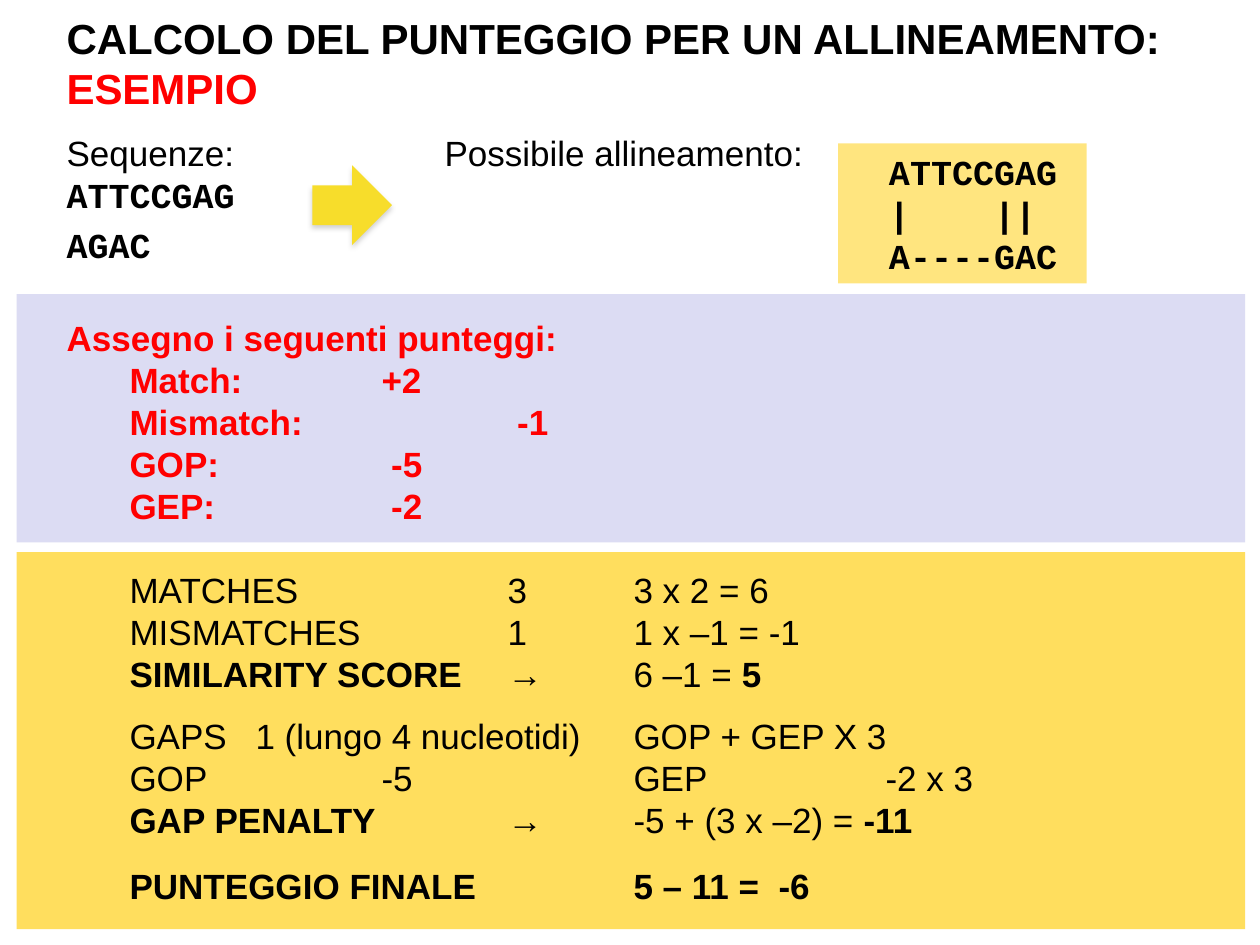
from lxml.etree import SubElement
from pptx import Presentation
from pptx.dml.color import RGBColor
from pptx.enum.shapes import MSO_SHAPE
from pptx.enum.text import MSO_ANCHOR, MSO_AUTO_SIZE, PP_ALIGN
from pptx.oxml.ns import qn
from pptx.util import Pt

BLACK = RGBColor(0x00, 0x00, 0x00)
RED = RGBColor(0xFF, 0x00, 0x00)
LAVENDER = RGBColor(0xD1, 0xD1, 0xF0)
AMBER = RGBColor(0xFF, 0xCC, 0x00)
YELLOW = RGBColor(0xF7, 0xDD, 0x2B)

SANS = "Arial"
MONO = "Courier New"
LEFT = 38
INDENTED = LEFT + 36
TAB_WIDTH = 72
LINE_FACTOR = 1.2


def place(shape, left, top, width, height):
    shape.left, shape.top = Pt(left), Pt(top)
    shape.width, shape.height = Pt(width), Pt(height)


def add_block(slide, kind, box, color, opacity=100):
    shape = slide.shapes.add_shape(kind, *map(Pt, box))
    shape.shadow.inherit = False
    shape.fill.solid()
    shape.fill.fore_color.rgb = color
    shape.line.fill.background()
    if opacity < 100:
        color_element = shape.fill._xPr.find(qn("a:solidFill"))[0]
        SubElement(color_element, qn("a:alpha"), val=str(opacity * 1000))
    return shape


def add_soft_shadow(shape):
    effects = shape._element.spPr.find(qn("a:effectLst"))
    shadow = SubElement(effects, qn("a:outerShdw"), blurRad=str(Pt(3.1)),
                        dist=str(Pt(1.8)), dir="5400000", rotWithShape="0")
    color = SubElement(shadow, qn("a:srgbClr"), val="808080")
    SubElement(color, qn("a:alpha"), val="35000")


def set_up_frame(shape, left_inset=0, top_inset=0):
    frame = shape.text_frame
    frame.word_wrap = True
    frame.auto_size = MSO_AUTO_SIZE.NONE
    frame.vertical_anchor = MSO_ANCHOR.TOP
    frame.margin_left, frame.margin_top = Pt(left_inset), Pt(top_inset)
    frame.margin_right = frame.margin_bottom = 0
    return frame


def add_text_box(slide, box):
    return set_up_frame(slide.shapes.add_textbox(*map(Pt, box)))


def write(frame, text, size=20, font=SANS, color=BLACK, bold=False, before=0):
    """Add a paragraph; text is a string or a list of (string, format) runs."""
    paragraph = frame.paragraphs[0]
    if paragraph.runs:
        paragraph = frame.add_paragraph()
    properties = paragraph._p.get_or_add_pPr()
    properties.set("marL", "0")
    properties.set("indent", "0")
    properties.set("defTabSz", str(Pt(TAB_WIDTH)))
    SubElement(properties, qn("a:buNone"))
    paragraph.alignment = PP_ALIGN.LEFT
    paragraph.line_spacing = Pt(size * LINE_FACTOR)
    paragraph.space_before = Pt(before)
    paragraph.space_after = Pt(0)
    for words, changes in [(text, {})] if isinstance(text, str) else text:
        run = paragraph.add_run()
        run.text = words
        run.font.name = font
        run.font.size = Pt(size)
        run.font.bold = changes.get("bold", bold)
        run.font.color.rgb = changes.get("color", color)


def add_title(slide):
    title = slide.shapes.title
    place(title, LEFT, 7, 664, 60)
    write(set_up_frame(title),
          [("CALCOLO DEL PUNTEGGIO PER UN ALLINEAMENTO: ", {}), ("ESEMPIO", {"color": RED})],
          size=24, bold=True)


def add_sequences(slide):
    frame = add_text_box(slide, (LEFT, 75, 430, 85))
    write(frame, "Sequenze:\t\tPossibile allineamento:")
    write(frame, "ATTCCGAG", font=MONO, bold=True)
    write(frame, "AGAC", font=MONO, bold=True, before=4.5)
    arrow = add_block(slide, MSO_SHAPE.RIGHT_ARROW, (178.5, 94.5, 45.5, 45.5), YELLOW)
    add_soft_shadow(arrow)


def add_alignment(slide):
    block = add_block(slide, MSO_SHAPE.RECTANGLE, (479, 82, 142, 80), AMBER, 50)
    frame = set_up_frame(block, left_inset=29, top_inset=3.75)
    for line in ("ATTCCGAG", "|    ||", "A----GAC"):
        write(frame, line, font=MONO, bold=True)


def add_scores(slide):
    add_block(slide, MSO_SHAPE.RECTANGLE, (9.5, 168, 702, 142), LAVENDER, 75)
    heading = add_text_box(slide, (LEFT, 181, 600, 24))
    write(heading, "Assegno i seguenti punteggi:", color=RED, bold=True)

    body = slide.placeholders[1]
    slide.shapes._spTree.append(body._element)  # in front of the panel
    place(body, INDENTED, 205, 600, 100)
    frame = set_up_frame(body)
    for text in ("Match:\t \t+2", "Mismatch:\t \t -1", "GOP:\t\t -5", "GEP:\t\t -2"):
        write(frame, text, color=RED, bold=True)


def add_calculation(slide):
    add_block(slide, MSO_SHAPE.RECTANGLE, (9.5, 315.5, 702, 215.5), AMBER, 63)
    frame = add_text_box(slide, (INDENTED, 325, 630, 200))
    strong = {"bold": True}
    write(frame, "MATCHES\t\t3\t3 x 2 = 6")
    write(frame, "MISMATCHES\t\t1 \t1 x –1 = -1")
    write(frame, [("SIMILARITY SCORE \t", strong), ("→ \t6 –1 = ", {}), ("5", strong)])
    write(frame, "GAPS\t1 (lungo 4 nucleotidi) \tGOP + GEP X 3", before=11)
    write(frame, "GOP\t\t-5\t\tGEP\t\t-2 x 3")
    write(frame, [("GAP PENALTY\t\t", strong), ("→ \t-5 + (3 x –2) = ", {}), ("-11", strong)])
    write(frame, "PUNTEGGIO FINALE\t\t5 – 11 =  -6", bold=True, before=14)


def main():
    presentation = Presentation()
    presentation.slide_width, presentation.slide_height = Pt(720), Pt(540)
    slide = presentation.slides.add_slide(presentation.slide_layouts[1])
    add_title(slide)
    add_scores(slide)
    add_calculation(slide)
    add_alignment(slide)
    add_sequences(slide)
    presentation.save("out.pptx")


if __name__ == "__main__":
    main()
